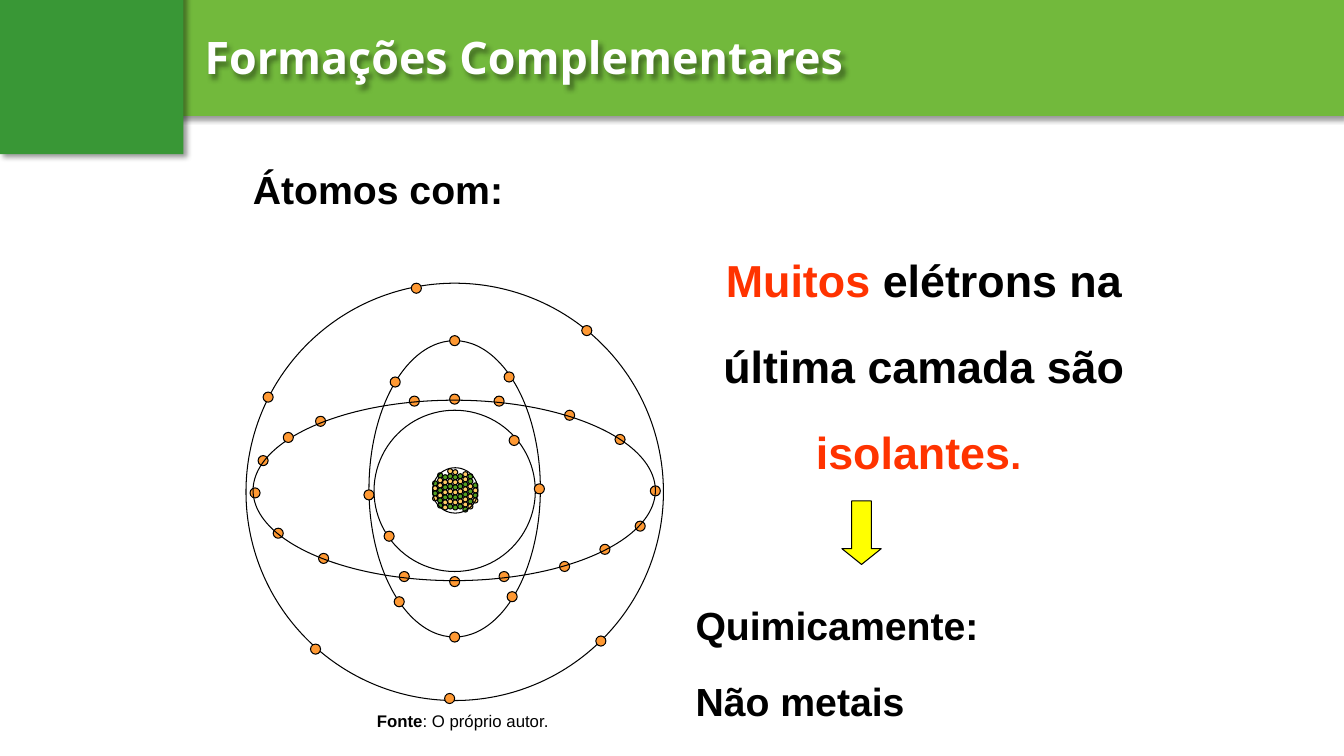
from lxml import etree
from pptx import Presentation
from pptx.dml.color import RGBColor
from pptx.enum import shapes as sh, text as tx
from pptx.oxml import ns
from pptx.util import Inches, Pt

HUES = {"lime": "72B93C", "green": "399736", "white": "FFFFFF",
        "black": "000000", "red": "FF3300", "yellow": "FFFF00",
        "G": "54A021", "Y": "FFCC66", "orange": "FF9933"}
KIND = sh.MSO_SHAPE
LEFT, MID = tx.PP_ALIGN.LEFT, tx.PP_ALIGN.CENTER
DOT, BEAD = 0.1, 0.05

# Nucleus columns: top of the first bead, then the bead colours downwards
BEADS = [(1.96, "GYGY"), (1.88, "GYYGYGG"), (1.9, "GYGYGYY"),
         (1.84, "YGYGYGYG"), (1.85, "YGYGYGYG"), (1.89, "GYGYGYG"),
         (1.87, "YYGYGYYG"), (1.89, "GGYGYGY"), (1.98, "GYGY")]

# Orbits: box, electrons under the line, electrons over the line
ORBITS = [
    ((1.27, 1.26, 1.6, 1.6), [], [(1.37, 2.46), (2.61, 1.51)]),
    ((1.22, 0.57, 1.7, 2.94), [],
     [(2.02, 0.52), (2.02, 3.46), (1.47, 3.11), (2.59, 3.06),
      (1.43, 0.93), (2.56, 0.88), (1.17, 2.05), (2.86, 1.99)]),
    ((0.07, 1.16, 3.99, 1.79),
     [(0.69, 1.32), (4.01, 2.01), (0.04, 2.03), (2.02, 1.1), (2.02, 2.91),
      (3.16, 1.26), (3.11, 2.76), (0.72, 2.68), (0.27, 2.43), (0.12, 1.71),
      (3.66, 1.5), (3.86, 2.36), (2.51, 2.86), (2.46, 1.12), (1.62, 1.12),
      (1.52, 2.86), (3.51, 2.59)],
     [(0.37, 1.48)]),
    ((0, 0, 4.14, 4.14), [],
     [(3.33, 0.42), (0.64, 3.58), (1.97, 4.07), (1.64, 0),
      (3.47, 3.5), (0.17, 1.08)]),
]


def tint(name):
    return RGBColor.from_string(HUES[name])


def shade(shape):
    """Give a shape a soft drop shadow."""
    shape.shadow.inherit = False
    glow = shape._element.spPr.find(ns.qn("a:effectLst"))
    drop = etree.SubElement(glow, ns.qn("a:outerShdw"), blurRad=str(Pt(4)),
                            dist=str(Pt(3)), dir="2700000", algn="tl",
                            rotWithShape="0")
    hue = etree.SubElement(drop, ns.qn("a:srgbClr"), val=HUES["black"])
    etree.SubElement(hue, ns.qn("a:alpha"), val="40000")


def draw(slide, kind, box, fill=None, line="black"):
    shape = slide.shapes.add_shape(kind, *map(Inches, box))
    shape.shadow.inherit = False
    if fill:
        shape.fill.solid()
        shape.fill.fore_color.rgb = tint(fill)
    else:
        shape.fill.background()
    if line:
        shape.line.color.rgb = tint(line)
        shape.line.width = Pt(0.75)
    else:
        shape.line.fill.background()
    return shape


def write(slide, box, paras, size, align=LEFT, gap=1.6, face="Arial", pad=0.05):
    """Each paragraph is a list of (words, colour, changed font values)."""
    label = slide.shapes.add_textbox(*map(Inches, box))
    frame = label.text_frame
    form = {"word_wrap": True, "margin_left": Inches(0.1),
            "margin_right": Inches(0.1), "margin_top": Inches(pad),
            "margin_bottom": Inches(pad)}
    for key, val in form.items():
        setattr(frame, key, val)
    for i, runs in enumerate(paras):
        para = frame.paragraphs[0] if i == 0 else frame.add_paragraph()
        para.alignment, para.line_spacing = align, gap
        for words, hue, diff in runs:
            run = para.add_run()
            run.text = words
            style = {"name": face, "size": Pt(size), "bold": True, **diff}
            for key, val in style.items():
                setattr(run.font, key, val)
            run.font.color.rgb = tint(hue)
    return label


def header(slide, box):
    x, y, w, h = box
    # Band, title and corner block
    shade(draw(slide, KIND.RECTANGLE, (x + 1.41, y, w - 1.41, h), "lime", None))
    shade(write(slide, (x + 1.93, y + 0.25, 10.82, 0.64),
                [[("Formações Complementares", "white", {})]],
                32, gap=1.0, face="Open Sans"))
    shade(draw(slide, KIND.RECTANGLE, (x, y - 0.08, 1.82, 1.61), "green", None))


def atom(slide, box):
    x, y = box[:2]

    def oval(left, top, w, h, fill=None):
        draw(slide, KIND.OVAL, (x + left, y + top, w, h), fill)

    # Nucleus
    for col, (top, hues) in enumerate(BEADS):
        for row, hue in enumerate(hues):
            oval(1.85 + col * BEAD, top + row * BEAD, BEAD, BEAD, hue)
    oval(1.85, 1.83, 0.45, 0.45)

    # Orbits with their electrons
    for ring, under, over in ORBITS:
        for spot in under:
            oval(*spot, DOT, DOT, "orange")
        oval(*ring)
        for spot in over:
            oval(*spot, DOT, DOT, "orange")

    # Source line
    write(slide, (x + 0.57, y + 4.14, 3.16, 0.4),
          [[("Fonte", "black", {}),
            (": O próprio autor.", "black", {"bold": False})]],
          12, MID, gap=1.0, pad=0.1)


def notes(slide, box):
    x, y = box[:2]
    # Statement
    write(slide, (x, y, 5.33, 2.36),
          [[("Muitos", "red", {}),
            (" elétrons na última camada são ", "black", {}),
            ("isolantes", "red", {}), (". ", "red", {"size": Pt(28)})]],
          32, MID)
    # Conclusion
    write(slide, (x + 0.3, y + 3.5, 3.52, 2.01),
          [[("Quimicamente:", "black", {})], [("Não metais", "black", {})]], 28)
    arrow = draw(slide, KIND.DOWN_ARROW, (x + 1.85, y + 2.83, 0.39, 0.63), "yellow")
    arrow.adjustments[0], arrow.adjustments[1] = 0.5, 0.4


def main():
    deck = Presentation()
    deck.slide_width, deck.slide_height = Inches(13.33), Inches(7.5)
    slide = deck.slides.add_slide(deck.slide_layouts[6])
    header(slide, (0, 0, 13.33, 1.15))
    atom(slide, (2.44, 2.81, 4.14, 4.14))
    write(slide, (2.41, 1.31, 3.42, 0.57), [[("Átomos com:", "black", {})]], 28)
    notes(slide, (6.5, 2.14, 5.33, 5.51))
    deck.save("out.pptx")


if __name__ == "__main__":
    main()
